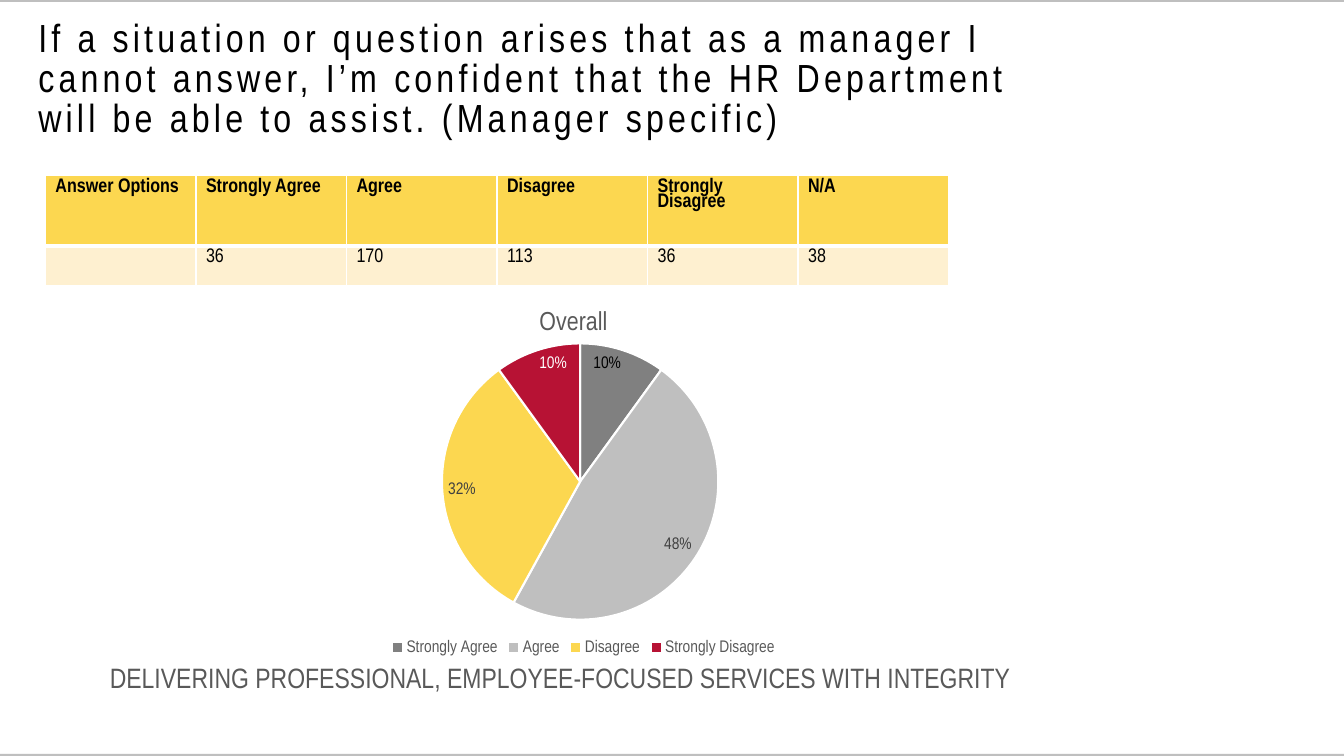
from lxml import etree
from pptx import Presentation, util as u
from pptx.chart.data import CategoryChartData
from pptx.dml.color import RGBColor
from pptx.enum import chart as ch, shapes, text
from pptx.oxml.ns import qn

FONT = "Arial Narrow"
WIDE, HIGH = u.Inches(13.33), u.Inches(7.5)
GOLD, CREAM, SILVER, INK, WHITE = "FCD750", "FEF0D0", "BFBFBF", "595959", "FFFFFF"
HEADS = ["Answer Options", "Strongly Agree", "Agree", "Disagree", "Strongly Disagree", "N/A"]
COUNTS = ["", "36", "170", "113", "36", "38"]
SHARES = [10, 48, 32, 10]
SLICES = ["808080", SILVER, GOLD, "B71234"]


def area(x, y, w, h):
    """Turn percentages of the slide's width and height into lengths."""
    return [int(WIDE * x / 100), int(HIGH * y / 100), int(WIDE * w / 100), int(HIGH * h / 100)]


def paint(item, color):
    """Give a fill or a font its solid colour."""
    if hasattr(item, "solid"):
        item.solid()
        item = item.fore_color
    else:
        item = item.color
    item.rgb = RGBColor.from_string(color)


def style(font, size, color, bold=False):
    """Set face, size, weight and colour of a font."""
    font.name, font.size, font.bold = FONT, u.Pt(size), bold
    paint(font, color)


def write(frame, words, size, color, lead, bold=False):
    """Fill a text frame with one left-aligned run and return the run."""
    frame.word_wrap = True
    para = frame.paragraphs[0]
    para.alignment, para.line_spacing = text.PP_ALIGN.LEFT, lead
    run = para.add_run()
    run.text = words
    style(run.font, size, color, bold)
    return run


def add_bar(slide, top):
    """Draw a thin full-width bar."""
    bar = slide.shapes.add_shape(shapes.MSO_SHAPE.RECTANGLE, *area(0, top, 100, 0.27))
    bar.shadow.inherit = False
    paint(bar.fill, SILVER)
    bar.line.fill.background()


def add_title(slide, words):
    """Place and fill the title placeholder."""
    title = slide.shapes.title
    title.left, title.top, title.width, title.height = area(2.1, 3.6, 76.82, 14)
    frame = title.text_frame
    frame.auto_size = text.MSO_AUTO_SIZE.NONE
    frame.vertical_anchor = text.MSO_ANCHOR.MIDDLE
    run = write(frame, words, 28, "000000", 0.85)
    run.font._element.set("spc", "300")


def edge(cell, base):
    """Draw white cell borders with the given bottom width."""
    props = cell._tc.get_or_add_tcPr()
    for spot, (side, width) in enumerate(zip("LRTB", (1, 1, 1, base))):
        line = etree.Element(qn(f"a:ln{side}"), w=str(u.Pt(width)))
        fill = etree.SubElement(line, qn("a:solidFill"))
        etree.SubElement(fill, qn("a:srgbClr"), val=WHITE)
        props.insert(spot, line)


def add_table(slide):
    """Add the table of answer counts."""
    table = slide.shapes.add_table(2, len(HEADS), *area(3.38, 23.2, 67.2, 14.53)).table
    rows = [(HEADS, GOLD, 9.33, 3), (COUNTS, CREAM, 5.2, 1)]
    for r, (words, color, tall, base) in enumerate(rows):
        table.rows[r].height = int(HIGH * tall / 100)
        for c, word in enumerate(words):
            cell = table.cell(r, c)
            paint(cell.fill, color)
            edge(cell, base)
            write(cell.text_frame, word, 14, "000000", 0.8, r == 0)


def lay(host, spot, **vals):
    """Give a chart part a manual layout."""
    for old in host.findall(qn("c:layout")):
        host.remove(old)
    outer = etree.Element(qn("c:layout"))
    host.insert(spot, outer)
    inner = etree.SubElement(outer, qn("c:manualLayout"))
    for key, val in vals.items():
        etree.SubElement(inner, qn(f"c:{key}"), val=str(val))


def add_pie(slide):
    """Add the pie of answer shares."""
    data = CategoryChartData()
    data.categories = HEADS[1:5]
    data.add_series("Series 1", SHARES)
    chart = slide.shapes.add_chart(ch.XL_CHART_TYPE.PIE, *area(17.4, 39.73, 52.06, 47.47), data).chart
    style(chart.font, 10, "000000")
    chart.has_title = chart.has_legend = True
    run = chart.chart_title.text_frame.paragraphs[0].add_run()
    run.text = "Overall"
    style(run.font, 18.6, INK)
    lay(chart.chart_title._element, 1, xMode="edge", yMode="edge", x=0.43, y=0.01)
    lay(chart._chartSpace.chart.plotArea, 0, layoutTarget="inner", xMode="edge",
        yMode="edge", x=0.13, y=0.12, w=0.73, h=0.77)
    legend = chart.legend
    legend.position = ch.XL_LEGEND_POSITION.BOTTOM
    legend.include_in_layout = False
    style(legend.font, 12, INK)
    chart.plots[0].vary_by_categories = True
    series = chart.plots[0].series[0]
    labels = series.data_labels
    labels.show_percentage, labels.show_value = True, False
    labels.number_format, labels.number_format_is_linked = "0%", False
    labels.position = ch.XL_LABEL_POSITION.INSIDE_END
    style(labels.font, 12, "404040")
    for i, color in enumerate(SLICES):
        form = series.points[i].format
        paint(form.fill, color)
        paint(form.line.fill, WHITE)
        form.line.width = u.Pt(1.5)
    for i, color in ((0, "000000"), (3, WHITE)):
        label = series.points[i].data_label
        style(label.font, 12, color)
        label.position = ch.XL_LABEL_POSITION.INSIDE_END
    for label in series._element.iter(qn("c:dLbl")):
        label.find(qn("c:showVal")).set("val", "0")
        label.find(qn("c:showPercent")).set("val", "1")


def add_motto(slide, words):
    """Add the motto below the chart."""
    box = slide.shapes.add_textbox(*area(7.43, 87.2, 71.94, 9.73))
    write(box.text_frame, words, 20, INK, 0.9)


def main():
    """Build and save the slide."""
    deck = Presentation()
    deck.slide_width, deck.slide_height = WIDE, HIGH
    slide = deck.slides.add_slide(deck.slide_layouts[5])
    paint(slide.background.fill, WHITE)
    for top in (0, 99.73):
        add_bar(slide, top)
    add_title(slide, "If a situation or question arises that as a manager I cannot answer, "
              "I’m confident that the HR Department will be able to assist. (Manager specific)")
    add_pie(slide)
    add_table(slide)
    add_motto(slide, "DELIVERING PROFESSIONAL, EMPLOYEE-FOCUSED SERVICES WITH INTEGRITY")
    deck.save("out.pptx")


if __name__ == "__main__":
    main()
